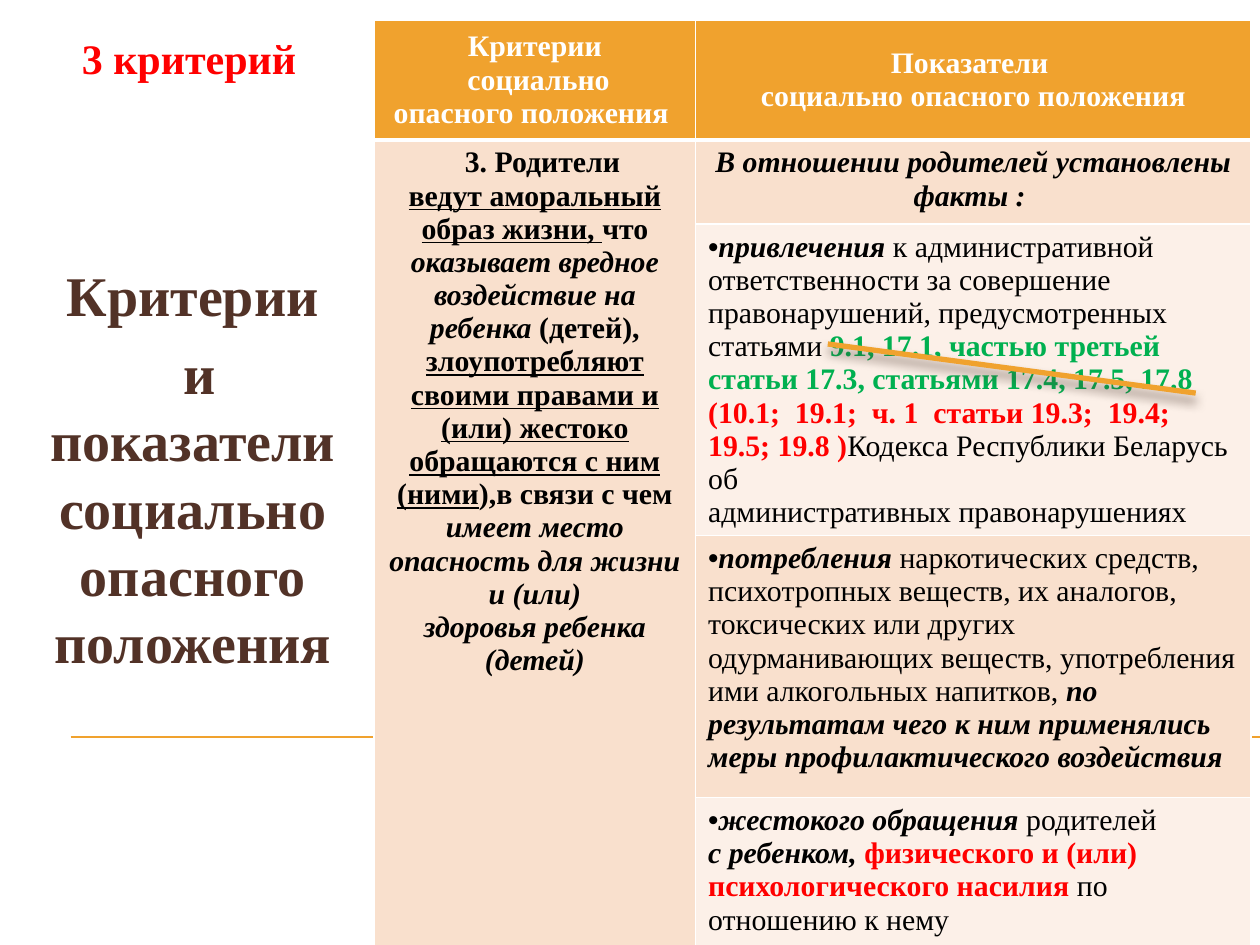
from dataclasses import dataclass
from typing import Optional

from lxml.etree import SubElement
from pptx import Presentation
from pptx.dml.color import RGBColor
from pptx.enum.shapes import MSO_CONNECTOR
from pptx.enum.text import MSO_ANCHOR, MSO_AUTO_SIZE, PP_ALIGN
from pptx.oxml.ns import qn
from pptx.util import Pt

EMU_PER_PX = 9144
FONT = "Times New Roman"
COLORS = {
    "accent": "F0A22E",
    "white": "FFFFFF",
    "black": "000000",
    "brown": "523227",
    "red": "FF0000",
    "green": "00B050",
    "band_dark": "F9E0CD",
    "band_light": "FCF0E8",
    "shadow": "4E3B30",
}
COLUMN_WIDTHS = (255, 441)
ROW_HEIGHTS = (95, 67, 237, 208, 123)


@dataclass(frozen=True)
class Span:
    text: str
    bold: bool = False
    italic: bool = False
    underline: bool = False
    color: str = "black"


@dataclass(frozen=True)
class Para:
    spans: tuple[Span, ...]
    centered: bool = False
    bullet: bool = False
    margin: int = 0
    indent: int = 0


@dataclass(frozen=True)
class Entry:
    row: int
    column: int
    fill: str
    paras: tuple[Para, ...]
    anchor: MSO_ANCHOR = MSO_ANCHOR.TOP


def strong(text: str, **style) -> Span:
    return Span(text, bold=True, **style)


def strong_italic(text: str) -> Span:
    return Span(text, bold=True, italic=True)


def centered(*spans: Span, **layout) -> Para:
    return Para(spans, centered=True, **layout)


def heading(text: str) -> Para:
    return centered(strong(text, color="white"))


ENTRIES = (
    Entry(0, 0, "accent", (
        heading("Критерии"),
        heading(" социально\nопасного положения "),
    ), MSO_ANCHOR.MIDDLE),
    Entry(0, 1, "accent", (
        heading("Показатели "),
        heading("социально опасного положения"),
    ), MSO_ANCHOR.MIDDLE),
    Entry(1, 0, "band_dark", (
        centered(strong("3. Родители"), margin=10, indent=2),
        centered(
            strong("ведут аморальный образ жизни, ", underline=True),
            strong("что "),
            strong_italic("оказывает вредное воздействие на ребенка"),
            strong(" (детей), "),
            strong("злоупотребляют своими правами и (или) жестоко "
                   "обращаются с ним (ними", underline=True),
            strong("),в связи с чем "),
            strong_italic("имеет место опасность для жизни и (или)"),
        ),
        centered(strong_italic("здоровья ребенка")),
        centered(strong_italic("(детей)")),
    )),
    Entry(1, 1, "band_dark", (
        centered(strong_italic("В отношении родителей установлены факты : ")),
    )),
    Entry(2, 1, "band_light", (
        Para((
            strong_italic("привлечения "),
            Span("к административной ответственности за совершение "
                 "правонарушений, предусмотренных"),
        ), bullet=True),
        Para((
            Span("статьями "),
            strong("9.1, 17.1, частью третьей статьи 17.3, "
                   "статьями 17.4, 17.5, 17.8 ", color="green"),
            strong("(10.1;  19.1;  ч. 1  статьи 19.3;  19.4; 19.5; 19.8 )",
                   color="red"),
            Span("Кодекса Республики Беларусь об"),
        )),
        Para((Span("административных правонарушениях"),)),
    )),
    Entry(3, 1, "band_dark", (
        Para((
            strong_italic("потребления "),
            Span("наркотических средств, психотропных веществ, их аналогов, "
                 "токсических или других одурманивающих веществ, "
                 "употребления ими алкогольных напитков, "),
            strong_italic("по результатам чего к ним применялись "
                          "меры профилактического воздействия"),
        ), bullet=True),
    )),
    Entry(4, 1, "band_light", (
        Para((strong_italic("жестокого обращения "), Span("родителей")),
             bullet=True),
        Para((
            strong_italic("с ребенком, "),
            strong("физического и (или) психологического насилия ",
                   color="red"),
            Span("по отношению к нему"),
        )),
    )),
)


def px(length: int) -> int:
    return length * EMU_PER_PX


def rgb(name: str) -> RGBColor:
    return RGBColor.from_string(COLORS[name])


def write(paragraph, text: str, *, size: int, color: str, bold: bool = True,
          italic: bool = False, underline: bool = False) -> None:
    for index, piece in enumerate(text.split("\n")):
        if index:
            paragraph.add_line_break()
        run = paragraph.add_run()
        run.text = piece
        font = run.font
        font.name, font.size = FONT, Pt(size)
        font.bold, font.italic, font.underline = bold, italic, underline
        font.color.rgb = rgb(color)


def draw_line(slide, start: tuple[int, int], end: tuple[int, int],
              width: float, shadow: Optional[str] = None) -> None:
    line = slide.shapes.add_connector(
        MSO_CONNECTOR.STRAIGHT, *map(px, start + end))
    line.line.color.rgb = rgb("accent")
    line.line.width = Pt(width)
    effects = SubElement(line._element.spPr, qn("a:effectLst"))
    if shadow:
        outer = SubElement(effects, qn("a:outerShdw"), blurRad=str(Pt(6)),
                           dist=str(Pt(4)), dir="5400000", rotWithShape="0")
        tint = SubElement(outer, qn("a:srgbClr"), val=COLORS[shadow])
        SubElement(tint, qn("a:alpha"), val="60000")


def set_borders(cell, row: int) -> None:
    properties = cell._tc.get_or_add_tcPr()
    thick_side = {0: "B", 1: "T"}.get(row)
    for index, side in enumerate("LRTB"):
        width = 3 if side == thick_side else 1
        border = SubElement(properties, qn(f"a:ln{side}"), w=str(Pt(width)))
        solid = SubElement(border, qn("a:solidFill"))
        SubElement(solid, qn("a:srgbClr"), val=COLORS["white"])
        properties.insert(index, border)


def fill_entry(table, entry: Entry) -> None:
    cell = table.cell(entry.row, entry.column)
    cell.fill.solid()
    cell.fill.fore_color.rgb = rgb(entry.fill)
    cell.vertical_anchor = entry.anchor
    frame = cell.text_frame
    for index, para in enumerate(entry.paras):
        paragraph = frame.add_paragraph() if index else frame.paragraphs[0]
        paragraph.alignment = PP_ALIGN.CENTER if para.centered else PP_ALIGN.LEFT
        properties = paragraph._p.get_or_add_pPr()
        properties.set("marL", str(px(para.margin)))
        properties.set("indent", str(px(para.indent)))
        if para.bullet:
            SubElement(properties, qn("a:buFont"), typeface="Arial")
            SubElement(properties, qn("a:buChar"), char="•")
        for span in para.spans:
            write(paragraph, span.text, size=17, color=span.color,
                  bold=span.bold, italic=span.italic, underline=span.underline)


def draw_criteria(slide) -> None:
    table = slide.shapes.add_table(
        len(ROW_HEIGHTS), len(COLUMN_WIDTHS), px(297), px(16),
        px(sum(COLUMN_WIDTHS)), px(sum(ROW_HEIGHTS))).table
    for column, width in zip(table.columns, COLUMN_WIDTHS):
        column.width = px(width)
    for row, height in zip(table.rows, ROW_HEIGHTS):
        row.height = px(height)
    table.cell(1, 0).merge(table.cell(len(ROW_HEIGHTS) - 1, 0))
    for entry in ENTRIES:
        fill_entry(table, entry)
    for row in range(len(ROW_HEIGHTS)):
        for column in range(len(COLUMN_WIDTHS)):
            set_borders(table.cell(row, column), row)


def draw_title(slide) -> None:
    title = slide.shapes.title
    title.left, title.top = px(27), px(202)
    title.width, title.height = px(252), px(370)
    frame = title.text_frame
    frame.word_wrap = True
    frame.auto_size = MSO_AUTO_SIZE.NONE
    frame.vertical_anchor = MSO_ANCHOR.TOP
    frame.margin_left = frame.margin_right = 0
    frame.margin_top = frame.margin_bottom = px(5)
    lines = ("Критерии", " и показатели социально опасного положения")
    for index, text in enumerate(lines):
        paragraph = frame.add_paragraph() if index else frame.paragraphs[0]
        paragraph.alignment = PP_ALIGN.CENTER
        paragraph.space_before = Pt(6)
        paragraph.line_spacing = 1.0
        write(paragraph, text, size=32, color="brown")


def draw_criterion_number(slide) -> None:
    frame = slide.shapes.add_textbox(px(35), px(21), px(230), px(51)).text_frame
    frame.word_wrap = True
    frame.auto_size = MSO_AUTO_SIZE.SHAPE_TO_FIT_TEXT
    frame.paragraphs[0].alignment = PP_ALIGN.CENTER
    write(frame.paragraphs[0], "3 критерий", size=24, color="red")


def main() -> None:
    deck = Presentation()
    deck.slide_width, deck.slide_height = px(1000), px(750)
    slide = deck.slides.add_slide(deck.slide_layouts[5])
    draw_line(slide, (56, 585), (1000, 585), 0.75)
    draw_criteria(slide)
    draw_title(slide)
    draw_criterion_number(slide)
    draw_line(slide, (657, 273), (949, 312), 3, shadow="shadow")
    deck.save("out.pptx")


if __name__ == "__main__":
    main()
